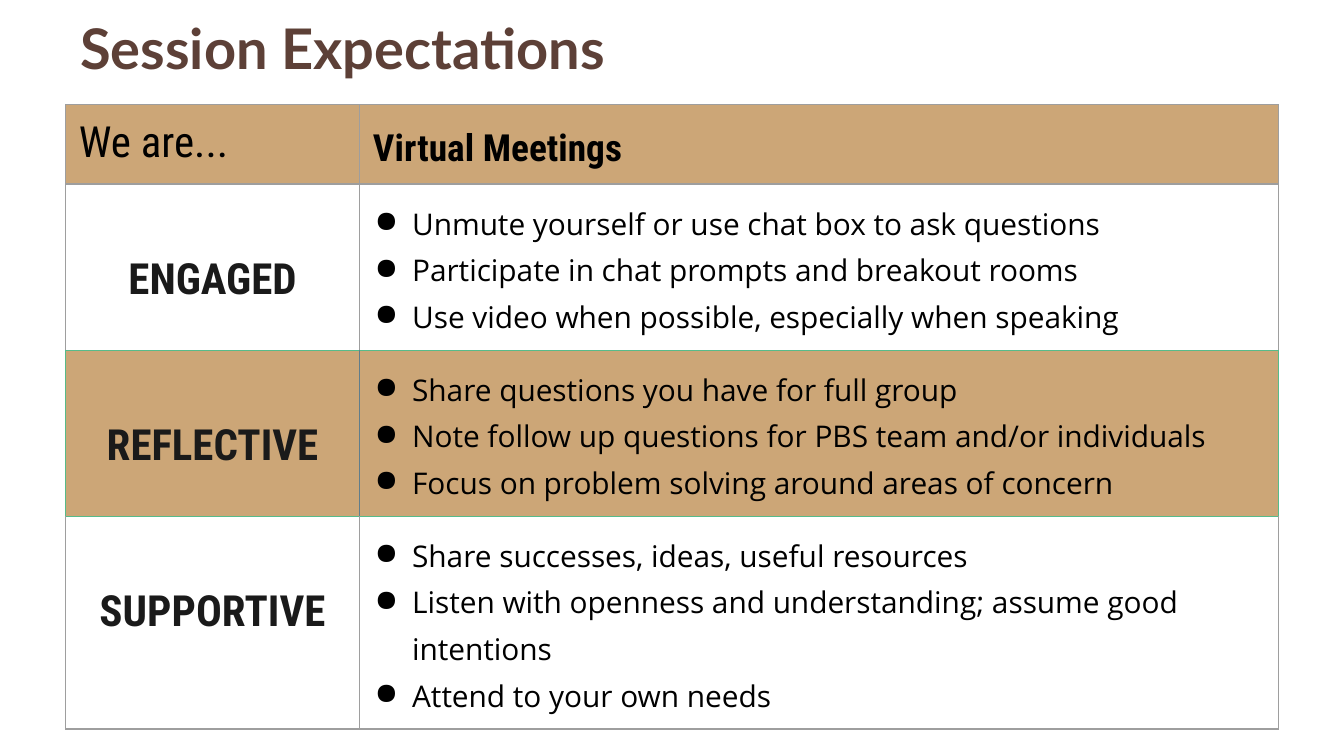
from lxml import etree
from pptx import Presentation
from pptx.dml.color import RGBColor
from pptx.enum.text import PP_ALIGN
from pptx.oxml.ns import qn
from pptx.util import Cm, Pt

CENTER = PP_ALIGN.CENTER
TAN, BROWN, BLACK, CHARCOAL = "CCA677", "5D4037", "000000", "1A1A1A"
GRAY, GREEN, SLATE = "9E9E9E", "57BB8A", "607D8B"
HEADING_FONT, BODY_FONT, TITLE_FONT = "Roboto Condensed", "Open Sans", "Lato"
INSET = Cm(0.25)
LABEL_DROP = Cm(1.14)

COLUMN_WIDTHS = (5.56, 17.37)
ROW_HEIGHTS = (1.49, 3.14, 3.14, 4.02)

# Label, expectations, fill, and (left, top, right, bottom) borders of both cells
EXPECTATIONS = [
    ("ENGAGED",
     ["Unmute yourself or use chat box to ask questions",
      "Participate in chat prompts and breakout rooms",
      "Use video when possible, especially when speaking"],
     None, (GRAY, GRAY, GRAY, GREEN), (GRAY, GRAY, GRAY, GREEN)),
    ("REFLECTIVE",
     ["Share questions you have for full group",
      "Note follow up questions for PBS team and/or individuals",
      "Focus on problem solving around areas of concern"],
     TAN, (GREEN, GREEN, SLATE, GREEN), (SLATE, GREEN, GREEN, GREEN)),
    ("SUPPORTIVE",
     ["Share successes, ideas, useful resources",
      "Listen with openness and understanding; assume good intentions",
      "Attend to your own needs"],
     None, (GRAY, GREEN, GRAY, GRAY), (GRAY, GREEN, GRAY, GRAY)),
]


def rgb(hex_color):
    return RGBColor.from_string(hex_color)


def add_run(paragraph, text, size, font, color=BLACK, bold=False):
    run = paragraph.add_run()
    run.text = text
    run.font.size = Pt(size)
    run.font.name = font
    run.font.bold = bold
    run.font.color.rgb = rgb(color)


def set_insets(holder, top=INSET):
    holder.margin_left = holder.margin_right = holder.margin_bottom = INSET
    holder.margin_top = top


def set_borders(cell, colors):
    """Draw the left, top, right and bottom borders in the given colours."""
    properties = cell._tc.get_or_add_tcPr()
    for index, (tag, color) in enumerate(zip(("lnL", "lnR", "lnT", "lnB"),
                                             (colors[0], colors[2], colors[1], colors[3]))):
        line = etree.Element(qn(f"a:{tag}"), w=str(Pt(0.75)))
        solid = etree.SubElement(line, qn("a:solidFill"))
        etree.SubElement(solid, qn("a:srgbClr"), val=color)
        properties.insert(index, line)


def style_cell(cell, fill, borders, top=INSET):
    set_insets(cell, top)
    if fill:
        cell.fill.solid()
        cell.fill.fore_color.rgb = rgb(fill)
    else:
        cell.fill.background()
    set_borders(cell, borders)


def set_bullet(paragraph):
    properties = paragraph._p.get_or_add_pPr()
    properties.set("marL", str(Cm(0.74)))
    properties.set("indent", str(-Cm(0.71)))
    bullet_color = etree.SubElement(properties, qn("a:buClr"))
    etree.SubElement(bullet_color, qn("a:srgbClr"), val=BLACK)
    etree.SubElement(properties, qn("a:buChar"), char="●")


def fill_header(we_are, meetings):
    for cell in (we_are, meetings):
        style_cell(cell, TAN, (GRAY,) * 4)
    add_run(we_are.text_frame.paragraphs[0], "We are...", 23, HEADING_FONT)
    heading = meetings.text_frame.paragraphs[0]
    heading.line_spacing = 1.2
    add_run(heading, "Virtual Meetings", 20, HEADING_FONT, bold=True)


def fill_label(cell, text):
    label = cell.text_frame.paragraphs[0]
    label.alignment = CENTER
    label.line_spacing = 1.2
    add_run(label, text, 23, HEADING_FONT, CHARCOAL, bold=True)


def fill_bullets(cell, items):
    frame = cell.text_frame
    for index, item in enumerate(items):
        paragraph = frame.add_paragraph() if index else frame.paragraphs[0]
        paragraph.line_spacing = 1.15
        set_bullet(paragraph)
        add_run(paragraph, item, 16, BODY_FONT)


def add_title(slide, left, top, width, height):
    frame = slide.shapes.add_textbox(left, top, width, height).text_frame
    frame.word_wrap = True
    set_insets(frame)
    add_run(frame.paragraphs[0], "Session Expectations", 30, TITLE_FONT, BROWN, bold=True)


def add_expectations(slide, left, top, width, height):
    table = slide.shapes.add_table(len(ROW_HEIGHTS), len(COLUMN_WIDTHS),
                                   left, top, width, height).table
    table.first_row = table.horz_banding = False
    for column, column_width in zip(table.columns, COLUMN_WIDTHS):
        column.width = Cm(column_width)
    for row, row_height in zip(table.rows, ROW_HEIGHTS):
        row.height = Cm(row_height)

    fill_header(table.cell(0, 0), table.cell(0, 1))
    for row, (label, items, fill, label_borders, item_borders) in enumerate(EXPECTATIONS, 1):
        label_cell, items_cell = table.cell(row, 0), table.cell(row, 1)
        style_cell(label_cell, fill, label_borders, LABEL_DROP)
        style_cell(items_cell, fill, item_borders)
        fill_label(label_cell, label)
        fill_bullets(items_cell, items)


def main():
    presentation = Presentation()
    presentation.slide_width, presentation.slide_height = Cm(25.4), Cm(14.29)
    slide = presentation.slides.add_slide(presentation.slide_layouts[6])
    add_expectations(slide, Cm(1.24), Cm(1.98), Cm(sum(COLUMN_WIDTHS)), Cm(sum(ROW_HEIGHTS)))
    add_title(slide, Cm(1.27), Cm(0), Cm(18.39), Cm(1.68))
    presentation.save("out.pptx")


if __name__ == "__main__":
    main()
